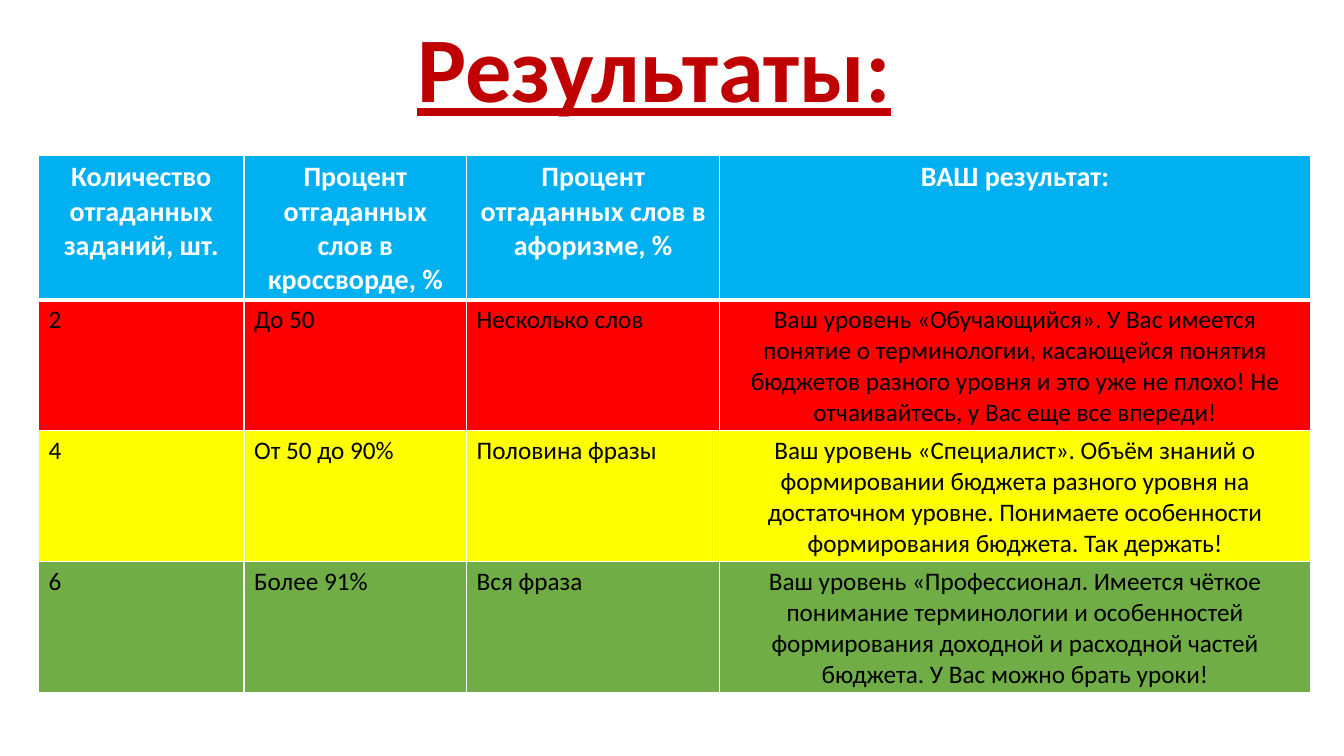
from dataclasses import dataclass

from lxml.etree import SubElement
from pptx import Presentation
from pptx.dml.color import RGBColor
from pptx.enum.text import MSO_ANCHOR, PP_ALIGN
from pptx.oxml.ns import qn
from pptx.slide import Slide
from pptx.table import _Cell
from pptx.text.text import _Paragraph
from pptx.util import Cm, Pt


@dataclass(frozen=True)
class Theme:
    font: str = "Calibri"
    title_color: str = "C00000"
    header_fill: str = "00B0F0"
    low_fill: str = "FF0000"
    middle_fill: str = "FFFF00"
    high_fill: str = "70AD47"
    light: str = "FFFFFF"
    dark: str = "000000"
    title_size: float = 66
    header_size: float = 20
    body_size: float = 18
    thin_border: float = 1
    thick_border: float = 3


@dataclass(frozen=True)
class TextStyle:
    size: float
    color: str
    bold: bool = False
    underline: bool = False


@dataclass(frozen=True)
class ResultRow:
    fill: str
    height: float
    style: TextStyle
    aligns: tuple[PP_ALIGN, ...]
    texts: tuple[str, ...]


THEME = Theme()
TITLE_STYLE = TextStyle(THEME.title_size, THEME.title_color, True, True)
HEADER_STYLE = TextStyle(THEME.header_size, THEME.light, True)
BODY_STYLE = TextStyle(THEME.body_size, THEME.dark)
HEADER_ALIGNS = (PP_ALIGN.CENTER,) * 4
BODY_ALIGNS = (PP_ALIGN.LEFT,) * 3 + (PP_ALIGN.CENTER,)
COLUMN_WIDTHS = (5.18, 5.61, 6.38, 14.88)
HEADER_HEIGHT = 3.63
BODY_HEIGHT = 3.28

ROWS = (
    ResultRow(THEME.header_fill, HEADER_HEIGHT, HEADER_STYLE, HEADER_ALIGNS, (
        "Количество отгаданных заданий, шт.",
        "Процент отгаданных слов в кроссворде, %",
        "Процент отгаданных слов в афоризме, %",
        "ВАШ результат:",
    )),
    ResultRow(THEME.low_fill, BODY_HEIGHT, BODY_STYLE, BODY_ALIGNS, (
        "2", "До 50", "Несколько слов",
        "Ваш уровень «Обучающийся». У Вас имеется понятие о терминологии, "
        "касающейся понятия бюджетов разного уровня и это уже не плохо! "
        "Не отчаивайтесь, у Вас еще все впереди!",
    )),
    ResultRow(THEME.middle_fill, BODY_HEIGHT, BODY_STYLE, BODY_ALIGNS, (
        "4", "От 50 до 90%", "Половина фразы",
        "Ваш уровень «Специалист». Объём знаний о формировании бюджета "
        "разного уровня на достаточном уровне. Понимаете особенности "
        "формирования бюджета. Так держать!",
    )),
    ResultRow(THEME.high_fill, BODY_HEIGHT, BODY_STYLE, BODY_ALIGNS, (
        "6", "Более 91%", "Вся фраза",
        "Ваш уровень «Профессионал. Имеется чёткое понимание терминологии "
        "и особенностей формирования доходной и расходной частей бюджета. "
        "У Вас можно брать уроки!",
    )),
)


def add_span(para: _Paragraph, text: str, style: TextStyle, align: PP_ALIGN) -> None:
    para.alignment = align
    span = para.add_run()
    span.text = text
    span.font.name = THEME.font
    span.font.size = Pt(style.size)
    span.font.bold = style.bold
    span.font.underline = style.underline
    span.font.color.rgb = RGBColor.from_string(style.color)


def set_borders(cell: _Cell, top: float, bottom: float) -> None:
    properties = cell._tc.get_or_add_tcPr()
    widths = {"L": THEME.thin_border, "R": THEME.thin_border, "T": top, "B": bottom}
    for side, width in widths.items():
        line = SubElement(properties, qn(f"a:ln{side}"), w=str(Pt(width)))
        fill = SubElement(line, qn("a:solidFill"))
        SubElement(fill, qn("a:srgbClr"), val=THEME.light)


def draw_title(page: Slide) -> None:
    box = page.shapes.add_textbox(Cm(1.88), Cm(0), Cm(29.21), Cm(3.68))
    frame = box.text_frame
    frame.word_wrap = True
    frame.vertical_anchor = MSO_ANCHOR.MIDDLE
    para = frame.paragraphs[0]
    para.line_spacing = 0.9
    add_span(para, "Результаты:", TITLE_STYLE, PP_ALIGN.CENTER)


def draw_results(page: Slide) -> None:
    width = sum(COLUMN_WIDTHS)
    height = sum(row.height for row in ROWS)
    table = page.shapes.add_table(
        len(ROWS), len(COLUMN_WIDTHS), Cm(0.97), Cm(3.91), Cm(width), Cm(height)
    ).table
    for column, column_width in zip(table.columns, COLUMN_WIDTHS):
        column.width = Cm(column_width)
    for index, row in enumerate(ROWS):
        table.rows[index].height = Cm(row.height)
        top = THEME.thick_border if index == 1 else THEME.thin_border
        bottom = THEME.thick_border if index == 0 else THEME.thin_border
        for position, (text, align) in enumerate(zip(row.texts, row.aligns)):
            cell = table.cell(index, position)
            set_borders(cell, top, bottom)
            cell.fill.solid()
            cell.fill.fore_color.rgb = RGBColor.from_string(row.fill)
            add_span(cell.text_frame.paragraphs[0], text, row.style, align)


def main() -> None:
    """Build the slide with the quiz results and save it."""
    deck = Presentation()
    deck.slide_width = Cm(33.87)
    deck.slide_height = Cm(19.05)
    page = deck.slides.add_slide(deck.slide_layouts[6])
    draw_title(page)
    draw_results(page)
    deck.save("out.pptx")


if __name__ == "__main__":
    main()
